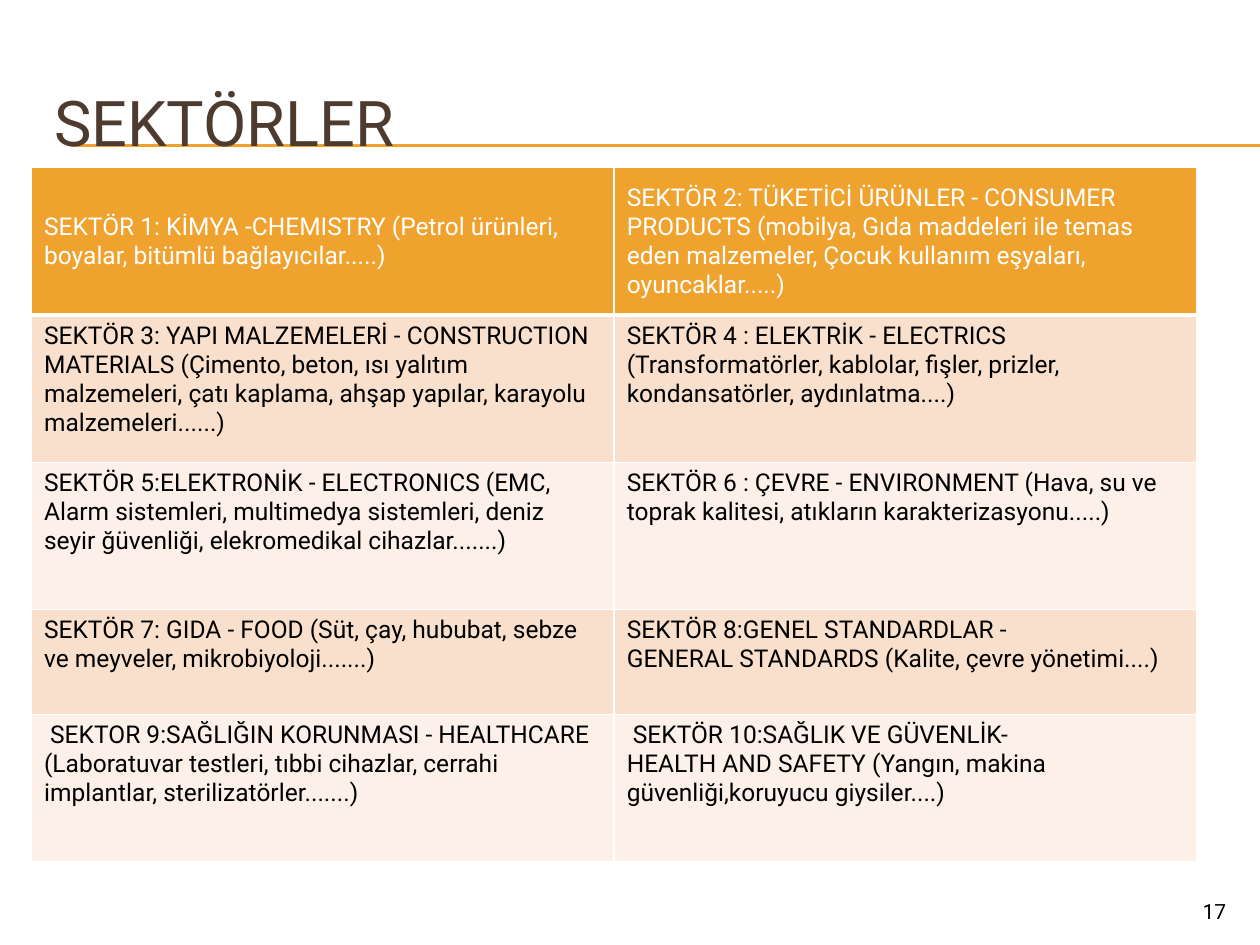
from lxml.etree import SubElement
from pptx import Presentation
from pptx.dml.color import RGBColor
from pptx.enum.shapes import MSO_CONNECTOR as Connector
from pptx.enum.text import MSO_ANCHOR as Anchor, PP_ALIGN as Align
from pptx.oxml.ns import qn
from pptx.util import Inches, Pt

# Content
TITLE = "SEKTÖRLER"
PAGE_NUMBER = "17"
SECTORS = [
    ("SEKTÖR 1: KİMYA -CHEMISTRY (Petrol ürünleri, boyalar, bitümlü bağlayıcılar.....)",
     "SEKTÖR 2: TÜKETİCİ ÜRÜNLER - CONSUMER PRODUCTS (mobilya, Gıda maddeleri ile temas "
     "eden malzemeler, Çocuk kullanım eşyaları, oyuncaklar.....)"),
    ("SEKTÖR 3: YAPI MALZEMELERİ - CONSTRUCTION MATERIALS (Çimento, beton, ısı yalıtım "
     "malzemeleri, çatı kaplama, ahşap yapılar, karayolu malzemeleri......)",
     "SEKTÖR 4 : ELEKTRİK - ELECTRICS (Transformatörler, kablolar, fişler, prizler, "
     "kondansatörler, aydınlatma....)"),
    ("SEKTÖR 5:ELEKTRONİK - ELECTRONICS (EMC, Alarm sistemleri, multimedya sistemleri, "
     "deniz seyir ğüvenliği, elekromedikal cihazlar.......)",
     "SEKTÖR 6 : ÇEVRE - ENVIRONMENT (Hava, su ve toprak kalitesi, atıkların "
     "karakterizasyonu.....)"),
    ("SEKTÖR 7: GIDA - FOOD (Süt, çay, hububat, sebze ve meyveler, mikrobiyoloji.......)",
     "SEKTÖR 8:GENEL STANDARDLAR -\nGENERAL STANDARDS (Kalite, çevre yönetimi....)"),
    (" SEKTOR 9:SAĞLIĞIN KORUNMASI - HEALTHCARE (Laboratuvar testleri, tıbbi cihazlar, "
     "cerrahi implantlar, sterilizatörler.......)",
     " SEKTÖR 10:SAĞLIK VE GÜVENLİK-\nHEALTH AND SAFETY (Yangın, makina "
     "güvenliği,koruyucu giysiler....)"),
]
FONT = "Roboto"
COLORS = {"title": "4E3B30", "accent": "F0A22E", "white": "FFFFFF", "black": "000000",
          "band_dark": "F9E0CD", "band_light": "FCF0E8"}

# Grid, in inches
TABLE_LEFT, TABLE_TOP, TABLE_WIDTH = 0.25, 1.33, 9.25
ROW_HEIGHTS = [1.17, 1.17, 1.17, 0.83, 1.17]
RULE_LEFT, RULE_TOPS = 0.56, (1.15, 1.16)


def color(name):
    return RGBColor.from_string(COLORS[name])


def write(paragraph, text, size, color_name):
    for index, line in enumerate(text.split("\n")):
        if index:
            paragraph.add_line_break()
        run = paragraph.add_run()
        run.text = line
        run.font.name = FONT
        run.font.size = Pt(size)
        run.font.bold = False
        run.font.color.rgb = color(color_name)


def set_borders(cell, bottom):
    properties = cell._tc.get_or_add_tcPr()
    widths = {"a:lnL": 1, "a:lnR": 1, "a:lnT": 1, "a:lnB": bottom}
    for position, (tag, width) in enumerate(widths.items()):
        border = SubElement(properties, qn(tag), w=str(Pt(width)))
        fill = SubElement(border, qn("a:solidFill"))
        SubElement(fill, qn("a:srgbClr"), val=COLORS["white"])
        properties.insert(position, border)  # borders precede the fill


presentation = Presentation()
presentation.slide_width, presentation.slide_height = Inches(10), Inches(7.5)
slide = presentation.slides.add_slide(presentation.slide_layouts[5])

# Title
title = slide.shapes.title
title.left, title.top, title.width, title.height = map(Inches, (0.33, 0.5, 9.5, 0.92))
title.text_frame.vertical_anchor = Anchor.MIDDLE
title.text_frame.paragraphs[0].alignment = Align.LEFT
write(title.text_frame.paragraphs[0], TITLE, 36, "title")

# Double rule behind the title
for top in RULE_TOPS:
    rule = slide.shapes.add_connector(Connector.STRAIGHT, Inches(RULE_LEFT), Inches(top),
                                      presentation.slide_width, Inches(top))
    rule.line.color.rgb = color("accent")
    rule.line.width = Pt(0.75)
    SubElement(rule._element.spPr, qn("a:effectLst"))
    title._element.addprevious(rule._element)

# Sector table
table = slide.shapes.add_table(
    len(SECTORS), 2, Inches(TABLE_LEFT), Inches(TABLE_TOP),
    Inches(TABLE_WIDTH), Inches(sum(ROW_HEIGHTS))).table
for column in table.columns:
    column.width = Inches(TABLE_WIDTH / 2)
for row_index, (row, texts) in enumerate(zip(table.rows, SECTORS)):
    row.height = Inches(ROW_HEIGHTS[row_index])
    is_header = row_index == 0
    band = "accent" if is_header else ("band_light", "band_dark")[row_index % 2]
    for cell, text in zip(row.cells, texts):
        cell.fill.solid()
        cell.fill.fore_color.rgb = color(band)
        cell.vertical_anchor = Anchor.MIDDLE if is_header else Anchor.TOP
        set_borders(cell, bottom=3 if is_header else 1)
        write(cell.text_frame.paragraphs[0], text, 14, "white" if is_header else "black")

# Page number
number_box = slide.shapes.add_textbox(*map(Inches, (9, 7.08, 0.83, 0.27)))
number_box.text_frame.word_wrap = True
number_box.text_frame.paragraphs[0].alignment = Align.RIGHT
write(number_box.text_frame.paragraphs[0], PAGE_NUMBER, 12, "black")

presentation.save("out.pptx")
